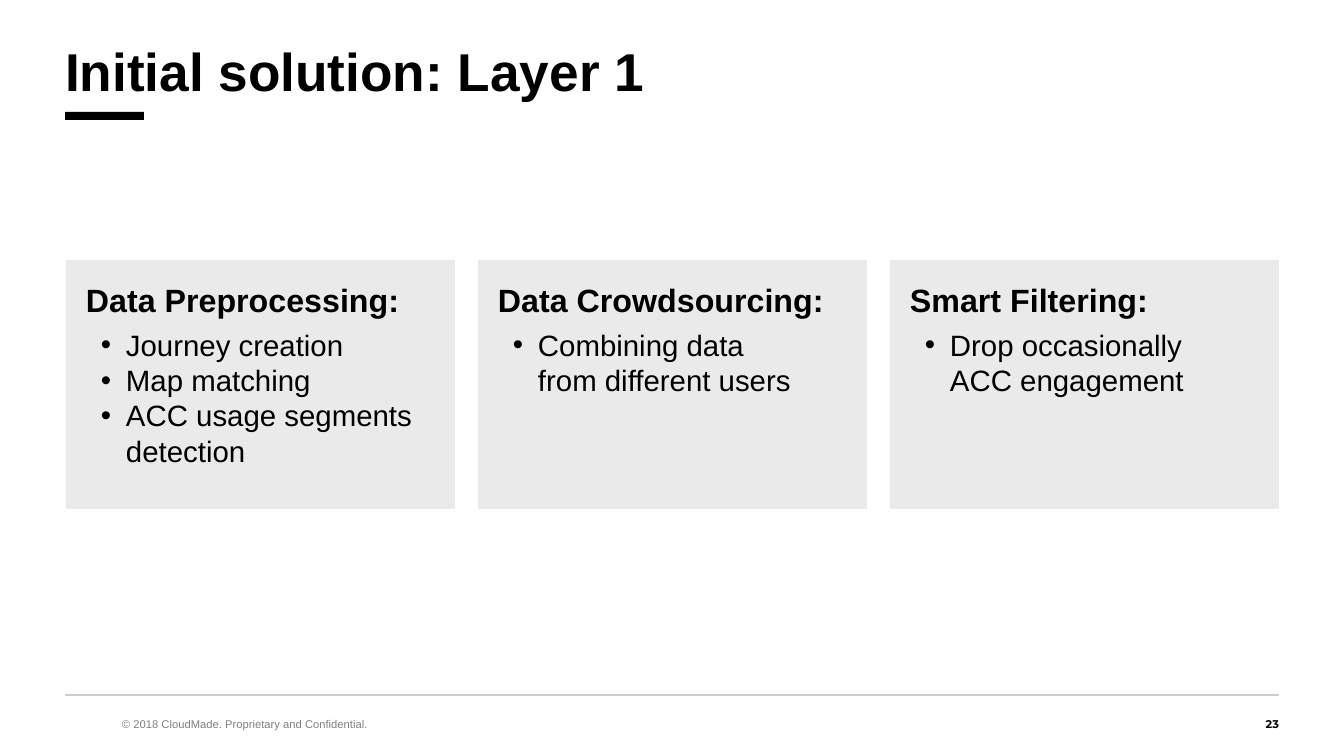
from lxml import etree
from pptx import Presentation
from pptx import util as u
from pptx.dml.color import RGBColor
from pptx.enum import shapes, text
from pptx.oxml.ns import qn

SCALE = u.Inches(1) / 100.8
BLACK, GREY, PALE, RULE = "000000", "808080", "EAEAEA", "CCCCCC"
LEFT, RIGHT = 65, 1279
CARD_W, CARD_H, STEP = 389, 249, 412
CARDS = [
    ("Data Preprocessing:",
     ["Journey creation", "Map matching", "ACC usage segments\ndetection"]),
    ("Data Crowdsourcing:", ["Combining data\nfrom different users"]),
    ("Smart Filtering:", ["Drop occasionally\nACC engagement"]),
]


def px(n):
    return u.Emu(round(n * SCALE))


def paint(fmt, color):
    if hasattr(fmt, "solid"):
        fmt.solid()
        fmt = fmt.fore_color
    else:
        fmt = fmt.color
    fmt.rgb = RGBColor.from_string(color)


def bullet(para):
    props = para._p.get_or_add_pPr()
    props.set("marL", str(px(40)))
    props.set("indent", str(-px(25)))
    color = etree.SubElement(props, qn("a:buClr"))
    etree.SubElement(color, qn("a:srgbClr"), val=BLACK)
    etree.SubElement(props, qn("a:buFont"), typeface="Arial")
    etree.SubElement(props, qn("a:buChar"), char="•")


def write(para, words, size, color=BLACK, bold=False, font="Arial",
          align=text.PP_ALIGN.LEFT, before=None, line=None, dot=False):
    if dot:
        bullet(para)
    para.alignment = align
    if before is not None:
        para.space_before = u.Pt(before)
    if line:
        para.line_spacing = line
    for i, part in enumerate(words.split("\n")):
        if i:
            para.add_line_break()
        run = para.add_run()
        run.text = part
        run.font.size = u.Pt(size)
        run.font.name = font
        run.font.bold = bold
        paint(run.font, color)


def setup(frame, inset, anchor):
    frame.word_wrap = True
    frame.vertical_anchor = anchor
    frame.margin_left = frame.margin_right = px(inset)
    frame.margin_top = frame.margin_bottom = px(inset)


def label(slide, x, y, w, h, words, size, anchor=text.MSO_ANCHOR.MIDDLE, **style):
    box = slide.shapes.add_textbox(px(x), px(y), px(w), px(h))
    setup(box.text_frame, 0, anchor)
    write(box.text_frame.paragraphs[0], words, size, **style)


def block(slide, x, y, w, h, color):
    shape = slide.shapes.add_shape(
        shapes.MSO_SHAPE.RECTANGLE, px(x), px(y), px(w), px(h))
    shape.shadow.inherit = False
    paint(shape.fill, color)
    shape.line.fill.background()
    return shape


def card(slide, x, y, head, items):
    frame = block(slide, x, y, CARD_W, CARD_H, PALE).text_frame
    setup(frame, 20, text.MSO_ANCHOR.TOP)
    write(frame.paragraphs[0], head, 23, bold=True)
    for i, item in enumerate(items):
        write(frame.add_paragraph(), item, 21, dot=True, before=0 if i else 6)


def rule(slide, y):
    line = slide.shapes.add_connector(
        shapes.MSO_CONNECTOR.STRAIGHT, px(LEFT), px(y), px(RIGHT), px(y))
    line.line.width = u.Pt(1)
    paint(line.line, RULE)
    etree.SubElement(line._element.spPr, qn("a:effectLst"))


def main():
    deck = Presentation()
    deck.slide_width, deck.slide_height = px(1344), px(756)
    slide = deck.slides.add_slide(deck.slide_layouts[6])
    label(slide, 122, 712, 642, 25,
          "© 2018 CloudMade. Proprietary and Confidential.", 8, color=GREY)
    label(slide, 1093, 712, 186, 25, "23", 8, bold=True,
          font="Montserrat", align=text.PP_ALIGN.RIGHT)
    rule(slide, 695)
    block(slide, LEFT, 112, 79, 8, BLACK)
    label(slide, LEFT, 46, RIGHT - LEFT, 65, "Initial solution: Layer 1", 38,
          anchor=text.MSO_ANCHOR.TOP, bold=True, line=0.9)
    for i, (head, items) in enumerate(CARDS):
        card(slide, LEFT + 1 + i * STEP, 260, head, items)
    deck.save("out.pptx")


if __name__ == "__main__":
    main()
